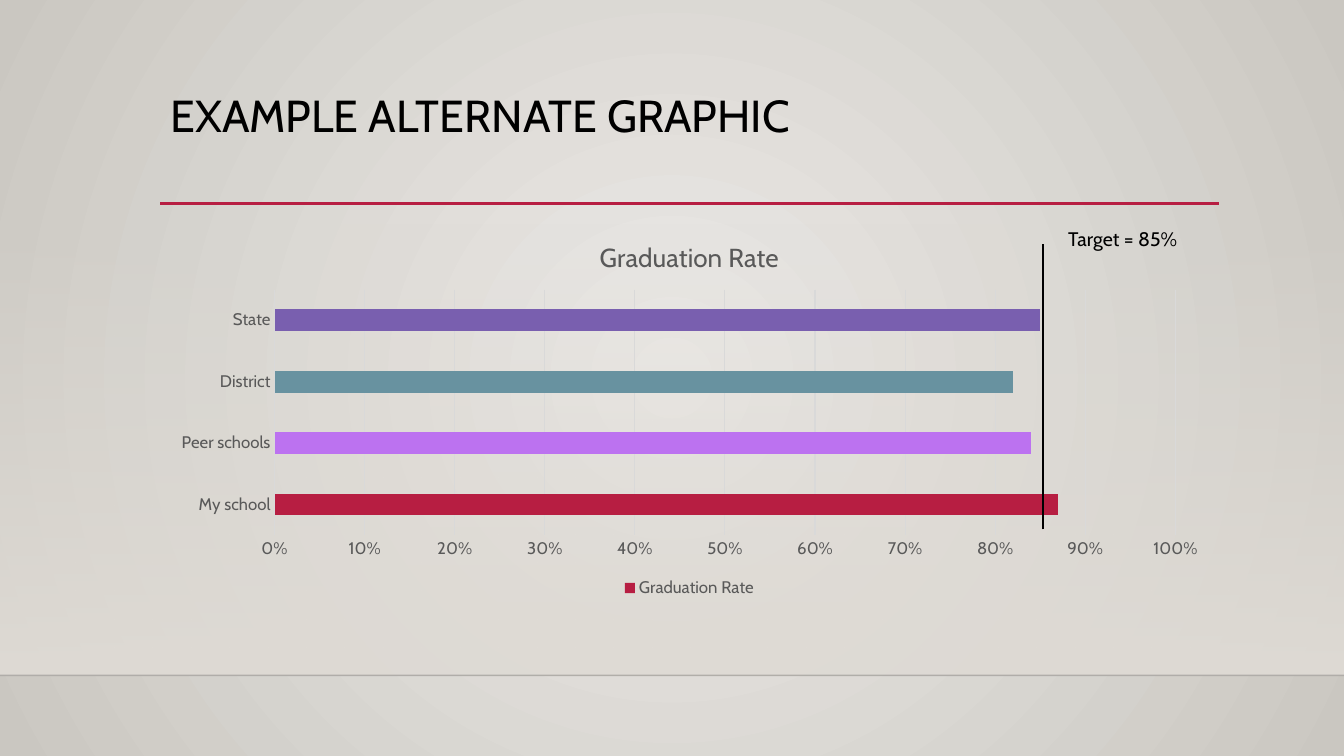
from dataclasses import dataclass

from lxml.etree import SubElement
from pptx import Presentation
from pptx.chart.data import CategoryChartData
from pptx.dml.color import RGBColor
from pptx.enum.chart import XL_CHART_TYPE as ChartType
from pptx.enum.chart import XL_LEGEND_POSITION as LegendPosition
from pptx.enum.chart import XL_TICK_MARK as TickMark
from pptx.enum.shapes import MSO_CONNECTOR as Connector
from pptx.enum.shapes import MSO_SHAPE as Shape
from pptx.enum.text import MSO_ANCHOR as Anchor
from pptx.enum.text import MSO_AUTO_SIZE as AutoSize
from pptx.enum.text import PP_ALIGN as Align
from pptx.oxml.ns import qn
from pptx.util import Cm, Pt


@dataclass(frozen=True)
class Theme:
    font: str = "Cabin"
    ink: str = "000000"
    muted: str = "595959"
    grid: str = "D9D9D9"
    accent: str = "B71E42"
    floor: str = "000001"
    wall: str = "DFDBD5"
    glow: str = "ECEAE7"
    edge: str = "CAC7C1"
    title_size: float = 32
    chart_title_size: float = 18.6
    target_size: float = 14
    axis_size: float = 12


THEME = Theme()
SLIDE_WIDTH, SLIDE_HEIGHT = Cm(33.87), Cm(19.05)
LEFT, CONTENT_WIDTH = Cm(4.04), Cm(26.67)
CHART_TOP = Cm(5.59)
FLOOR_Y = Cm(17.02)

# School, graduation rate, bar colour (bottom to top)
RATES = [
    ("My school", 0.87, THEME.accent),
    ("Peer schools", 0.84, "BC72F0"),
    ("District", 0.82, "6892A0"),
    ("State", 0.85, "795FAF"),
]


def style_font(font, size, color):
    font.name = THEME.font
    font.size = Pt(size)
    font.color.rgb = RGBColor.from_string(color)


def write_text(frame, text, size, color):
    paragraph = frame.paragraphs[0]
    run = paragraph.add_run()
    run.text = text
    style_font(run.font, size, color)
    return paragraph


def set_alpha(color_element, percent):
    SubElement(color_element, qn("a:alpha"), val=str(percent * 1000))


def set_gradient(gradient, stops):
    """Fill an a:gradFill with (position, colour, opacity) stops."""
    for child in list(gradient):
        gradient.remove(child)
    stop_list = SubElement(gradient, qn("a:gsLst"))
    for position, color, opacity in stops:
        stop = SubElement(stop_list, qn("a:gs"), pos=str(position * 1000))
        set_alpha(SubElement(stop, qn("a:srgbClr"), val=color), opacity)


def add_background(slide):
    slide.background.fill.gradient()
    gradient = slide.element.xpath(".//p:bgPr/a:gradFill")[0]
    set_gradient(gradient, [(0, THEME.glow, 100), (100, THEME.edge, 100)])
    circle = SubElement(gradient, qn("a:path"), path="circle")
    center = dict.fromkeys("ltrb", "50000")
    SubElement(circle, qn("a:fillToRect"), center)


def add_wall(slide):
    top = Cm(5.61)
    wall = slide.shapes.add_shape(Shape.RECTANGLE, 0, top, SLIDE_WIDTH, FLOOR_Y - top)
    wall.shadow.inherit = False
    wall.line.fill.background()
    wall.fill.gradient()
    gradient = wall.element.xpath("./p:spPr/a:gradFill")[0]
    set_gradient(gradient, [(0, THEME.wall, 0), (100, THEME.wall, 100)])
    SubElement(gradient, qn("a:lin"), ang="5400000", scaled="0")


def add_line(slide, start, end, color, width, opacity=100):
    line = slide.shapes.add_connector(Connector.STRAIGHT, *start, *end)
    line.line.color.rgb = RGBColor.from_string(color)
    line.line.width = Pt(width)
    if opacity < 100:
        set_alpha(line.element.xpath("./p:spPr/a:ln//a:srgbClr")[0], opacity)
    SubElement(line.element.spPr, qn("a:effectLst"))


def add_title(slide, text):
    title = slide.shapes.title
    title.left, title.top = LEFT, Cm(2.24)
    title.width, title.height = CONTENT_WIDTH, Cm(2.92)
    frame = title.text_frame
    frame.vertical_anchor = Anchor.TOP
    frame.auto_size = AutoSize.NONE
    paragraph = write_text(frame, text, THEME.title_size, THEME.ink)
    paragraph.alignment = Align.LEFT
    paragraph.line_spacing = 0.9


def add_label(slide, text, left, top, width, height):
    frame = slide.shapes.add_textbox(left, top, width, height).text_frame
    frame.word_wrap = True
    frame.auto_size = AutoSize.SHAPE_TO_FIT_TEXT
    write_text(frame, text, THEME.target_size, THEME.ink)


def style_axis(axis):
    axis.major_tick_mark = axis.minor_tick_mark = TickMark.NONE
    style_font(axis.tick_labels.font, THEME.axis_size, THEME.muted)


def style_grid_line(line):
    line.color.rgb = RGBColor.from_string(THEME.grid)
    line.width = Pt(0.75)


def add_rate_chart(slide, name):
    schools, rates, colors = zip(*RATES)
    rate_data = CategoryChartData(number_format="0%")
    rate_data.categories = schools
    rate_data.add_series(name, rates)
    chart = slide.shapes.add_chart(
        ChartType.BAR_CLUSTERED, LEFT, CHART_TOP, CONTENT_WIDTH, Cm(9.58), rate_data
    ).chart
    style_font(chart.font, 10, THEME.ink)

    # Title and legend
    chart.has_title = True
    write_text(chart.chart_title.text_frame, name, THEME.chart_title_size,
               THEME.muted).font.bold = False
    chart.chart_title.text_frame.paragraphs[0].runs[0].font.bold = False
    chart.chart_title.include_in_layout = False
    chart.has_legend = True
    chart.legend.position = LegendPosition.BOTTOM
    chart.legend.include_in_layout = False
    style_font(chart.legend.font, THEME.axis_size, THEME.muted)

    # Axes
    style_axis(chart.category_axis)
    style_grid_line(chart.category_axis.format.line)
    rate_axis = chart.value_axis
    style_axis(rate_axis)
    rate_axis.minimum_scale, rate_axis.maximum_scale = 0, 1
    rate_axis.major_unit = 0.1
    rate_axis.tick_labels.number_format = "0%"
    rate_axis.tick_labels.number_format_is_linked = False
    rate_axis.format.line.fill.background()
    style_grid_line(rate_axis.major_gridlines.format.line)

    # Bars
    plot = chart.plots[0]
    plot.gap_width = 182
    plot.vary_by_categories = False
    bars = plot.series[0]
    bars.format.fill.solid()
    bars.format.fill.fore_color.rgb = RGBColor.from_string(THEME.accent)
    for index, color in enumerate(colors[1:], start=1):
        fill = bars.points[index].format.fill
        fill.solid()
        fill.fore_color.rgb = RGBColor.from_string(color)


def main():
    deck = Presentation()
    deck.slide_width, deck.slide_height = SLIDE_WIDTH, SLIDE_HEIGHT
    slide = deck.slides.add_slide(deck.slide_layouts.get_by_name("Title Only"))

    # Backdrop
    add_background(slide)
    add_wall(slide)
    add_line(slide, (0, FLOOR_Y), (SLIDE_WIDTH, FLOOR_Y), THEME.floor, 1, opacity=20)

    # Heading
    add_title(slide, "EXAMPLE ALTERNATE GRAPHIC")
    rule_y = Cm(5.13)
    add_line(slide, (LEFT, rule_y), (Cm(30.73), rule_y), THEME.accent, 2.5)

    # Chart with its target
    add_rate_chart(slide, "Graduation Rate")
    target_x = Cm(26.29)
    add_line(slide, (target_x, Cm(13.34)), (target_x, Cm(6.15)), THEME.ink, 1.25)
    add_label(slide, "Target = 85%", Cm(26.67), CHART_TOP, Cm(4.04), Cm(0.86))

    deck.save("out.pptx")


if __name__ == "__main__":
    main()
